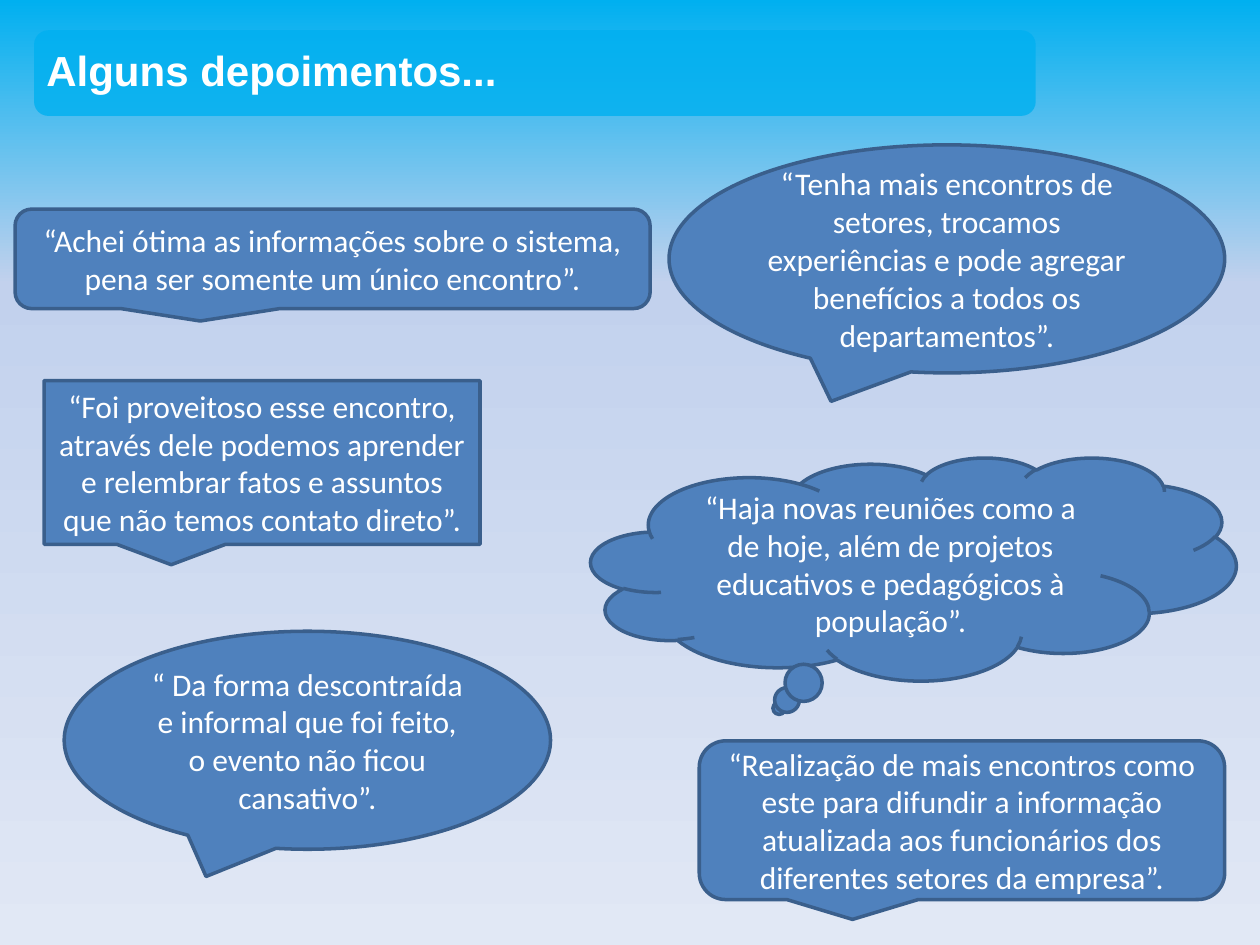
from copy import deepcopy

from lxml import etree
from pptx import Presentation
from pptx.dml.color import RGBColor
from pptx.enum.shapes import MSO_SHAPE
from pptx.enum.text import MSO_ANCHOR, MSO_AUTO_SIZE, PP_ALIGN
from pptx.oxml.ns import qn
from pptx.util import Inches, Pt

ROUNDED_BAR = MSO_SHAPE.ROUNDED_RECTANGLE
ROUNDED = MSO_SHAPE.ROUNDED_RECTANGULAR_CALLOUT
OVAL = MSO_SHAPE.OVAL_CALLOUT
SQUARE = MSO_SHAPE.RECTANGULAR_CALLOUT
CLOUD = MSO_SHAPE.CLOUD_CALLOUT
MIDDLE = MSO_ANCHOR.MIDDLE
CENTER = PP_ALIGN.CENTER
GROW = MSO_AUTO_SIZE.SHAPE_TO_FIT_TEXT

WIDTH, HEIGHT = Inches(10), Inches(7.5)
SKY, WHITE = "00B0F0", "FFFFFF"
BUBBLE_FILL, BUBBLE_LINE = "4F81BD", "3A5F8C"
BACKGROUND_STOPS = [(0, SKY), (0.3, "C2D1ED"), (1, "E1E8F5")]

# Callout shape, place in percent of the slide (left, top, width, height), words
TESTIMONIALS = [
    (ROUNDED, (1.2, 22.13, 50.4, 10.53),
     "“Achei ótima as informações sobre o sistema, pena ser somente um único encontro”."),
    (OVAL, (53.1, 15.33, 44.1, 24.13),
     "“Tenha mais encontros de setores, trocamos experiências e pode agregar "
     "benefícios a todos os departamentos”."),
    (SQUARE, (3.5, 40.27, 34.6, 17.33),
     "“Foi proveitoso esse encontro, através dele podemos aprender e relembrar "
     "fatos e assuntos que não temos contato direto”."),
    (CLOUD, (46.9, 48.4, 51.2, 23.6),
     "“Haja novas reuniões como a de hoje, além de projetos educativos e "
     "pedagógicos à população”."),
    (OVAL, (5.1, 66.8, 38.6, 23.07),
     "“ Da forma descontraída e informal que foi feito, o evento não ficou cansativo”."),
    (ROUNDED, (55.5, 78.4, 41.7, 16.8),
     "“Realização de mais encontros como este para difundir a informação "
     "atualizada aos funcionários dos diferentes setores da empresa”."),
]


def color(hex_string):
    return RGBColor.from_string(hex_string)


def place(left, top, width, height):
    """Turn percentages of the slide into lengths."""
    return [int(share * side / 100) for share, side in
            zip((left, top, width, height), (WIDTH, HEIGHT, WIDTH, HEIGHT))]


def paint_background(slide):
    fill = slide.background.fill
    fill.gradient()
    fill.gradient_angle = 270
    stop_list = slide.element.xpath(".//a:gsLst")[0]
    stop_list.append(deepcopy(stop_list[-1]))
    for stop, (position, hex_string) in zip(fill.gradient_stops, BACKGROUND_STOPS):
        stop.position = position
        stop.color.rgb = color(hex_string)


def add_filled_shape(slide, kind, box, fill):
    shape = slide.shapes.add_shape(kind, *place(*box))
    shape.shadow.inherit = False
    shape.fill.solid()
    shape.fill.fore_color.rgb = color(fill)
    return shape


def write(paragraph, text, font_name, size, bold=False):
    run = paragraph.add_run()
    run.text = text
    run.font.name = font_name
    run.font.size = Pt(size)
    run.font.bold = bold
    run.font.color.rgb = color(WHITE)


def add_title(slide, text):
    bar = add_filled_shape(slide, ROUNDED_BAR, (2.7, 3.2, 79.5, 9.07), SKY)
    bar.line.fill.background()
    solid_color = bar.element.spPr.find(qn("a:solidFill"))[0]
    etree.SubElement(solid_color, qn("a:alpha"), val="80000")

    frame = slide.shapes.add_textbox(*place(2.7, 4, 79.6, 6.67)).text_frame
    frame.word_wrap = True
    frame.auto_size = GROW
    write(frame.paragraphs[0], text, "Arial", 24, bold=True)


def add_testimonial(slide, kind, box, text):
    bubble = add_filled_shape(slide, kind, box, BUBBLE_FILL)
    bubble.line.color.rgb = color(BUBBLE_LINE)
    bubble.line.width = Pt(2)
    frame = bubble.text_frame
    frame.word_wrap = True
    frame.vertical_anchor = MIDDLE
    paragraph = frame.paragraphs[0]
    paragraph.alignment = CENTER
    write(paragraph, text, "Calibri", 18)


def main():
    presentation = Presentation()
    presentation.slide_width, presentation.slide_height = WIDTH, HEIGHT
    slide = presentation.slides.add_slide(presentation.slide_layouts[6])
    paint_background(slide)
    add_title(slide, "Alguns depoimentos...")
    for kind, box, text in TESTIMONIALS:
        add_testimonial(slide, kind, box, text)
    presentation.save("out.pptx")


if __name__ == "__main__":
    main()
